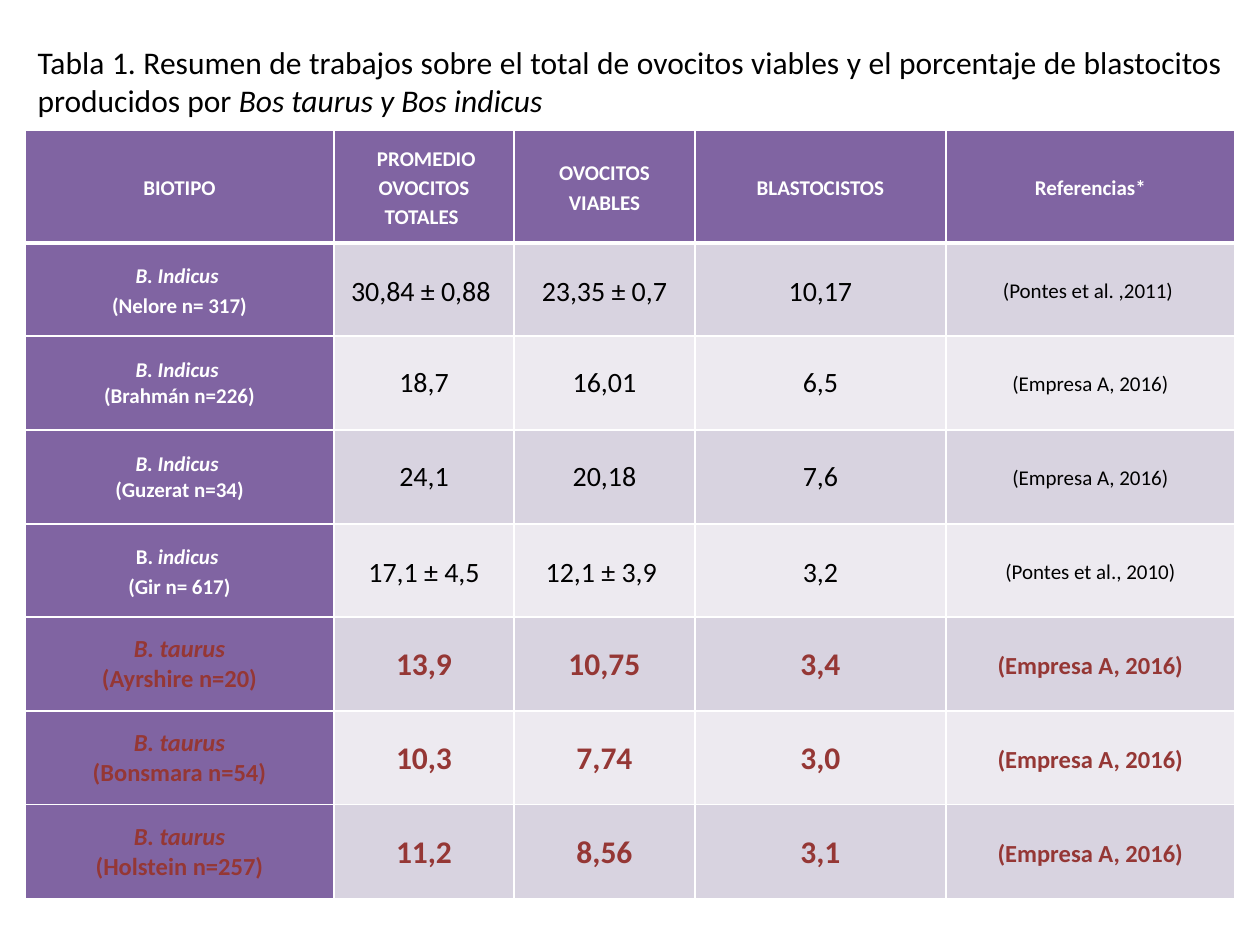
"""Build a slide with a table of oocyte and blastocyst yields by cattle biotype."""
from lxml import etree
from pptx import Presentation
from pptx.dml.color import RGBColor
from pptx.enum.text import MSO_ANCHOR as ANCHOR, MSO_AUTO_SIZE as AUTO, PP_ALIGN as ALIGN
from pptx.oxml.ns import qn
from pptx.util import Pt

PX = 914400 / 126
PURPLE = RGBColor(0x80, 0x64, 0xA2)
LILAC = RGBColor(0xD8, 0xD3, 0xE0)
PALE = RGBColor(0xED, 0xEA, 0xF0)
MAROON = RGBColor(0x95, 0x37, 0x35)
WHITE = RGBColor(0xFF, 0xFF, 0xFF)
BLACK = RGBColor(0, 0, 0)

HEADERS = [" PROMEDIO OVOCITOS TOTALES ", "OVOCITOS VIABLES", "BLASTOCISTOS", "Referencias*"]
ROWS = [
    ("", "B. Indicus ", "(Nelore n= 317)", "30,84 ± 0,88 ", "23,35 ± 0,7", "10,17", "(Pontes et al. ,2011) "),
    ("", "B. Indicus ", "(Brahmán n=226)", "18,7", "16,01", "6,5", "(Empresa A, 2016)"),
    ("", "B. Indicus ", "(Guzerat n=34)", "24,1", "20,18", "7,6", "(Empresa A, 2016)"),
    ("B. ", "indicus ", "(Gir n= 617)", "17,1 ± 4,5", "12,1 ± 3,9 ", "3,2", "(Pontes et al., 2010)"),
    ("", "B. taurus", "(Ayrshire n=20)", "13,9", "10,75", "3,4", "(Empresa A, 2016)"),
    ("", "B. taurus", "(Bonsmara n=54)", "10,3", "7,74", "3,0", "(Empresa A, 2016)"),
    ("", "B. taurus", "(Holstein n=257)", "11,2", "8,56", "3,1", "(Empresa A, 2016)"),
]
COL_WIDTHS = [309, 180, 181, 251, 289]
ROW_HEIGHTS = [113, 93, 94, 94, 93, 94, 94, 94]
LOOSE_ROWS = (0, 1, 4)


def px(n):
    return int(n * PX)


def add_run(p, text, size, color, bold=False, italic=False):
    r = p.add_run()
    r.text = text
    font = r.font
    font.name, font.size, font.bold, font.italic = "Calibri", Pt(size), bold, italic
    font.color.rgb = color


prs = Presentation()
prs.slide_width, prs.slide_height = px(1260), px(945)
s = prs.slides.add_slide(prs.slide_layouts[5])

title = s.shapes.title
title.left, title.top, title.width, title.height = px(25), px(37), px(1210), px(89)
tf = title.text_frame
tf.word_wrap = True
tf.auto_size = AUTO.NONE
tf.vertical_anchor = ANCHOR.TOP
p = tf.paragraphs[0]
p.alignment = ALIGN.JUSTIFY
add_run(p, "Tabla 1. Resumen de trabajos sobre el total de ovocitos viables y el "
           "porcentaje de blastocitos producidos por ", 18, BLACK)
add_run(p, "Bos taurus y Bos indicus ", 18, BLACK, italic=True)

table = s.shapes.add_table(len(ROW_HEIGHTS), len(COL_WIDTHS), px(25), px(130),
                           px(sum(COL_WIDTHS)), px(sum(ROW_HEIGHTS))).table
for col, width in zip(table.columns, COL_WIDTHS):
    col.width = px(width)
for row, height in zip(table.rows, ROW_HEIGHTS):
    row.height = px(height)

for i in range(len(ROW_HEIGHTS)):
    taurus = i > 4
    for j in range(len(COL_WIDTHS)):
        cell = table.cell(i, j)
        loose = i in LOOSE_ROWS or j == 4
        cell.vertical_anchor = ANCHOR.MIDDLE
        cell.margin_left = cell.margin_right = px(9 if loose else 1)
        cell.margin_top = px(0 if loose else 1)
        cell.margin_bottom = 0

        p = cell.text_frame.paragraphs[0]
        if i == 0:
            add_run(p, (["BIOTIPO"] + HEADERS)[j], 12, WHITE, bold=True)
        elif j == 0:
            upright, species, breed = ROWS[i - 1][:3]
            size, color = (14, MAROON) if taurus else (12, WHITE)
            if upright:
                add_run(p, upright, size, color, bold=True)
            add_run(p, species, size, color, bold=True, italic=True)
            add_run(cell.text_frame.add_paragraph(), breed, size, color, bold=True)
        else:
            size = (12 if j == 4 else 16) + 2 * taurus
            add_run(p, ROWS[i - 1][j + 2], size, MAROON if taurus else BLACK, bold=taurus)
        for p in cell.text_frame.paragraphs:
            p.alignment = ALIGN.CENTER
            p.line_spacing = 1.15 if loose else 1.0

        tcPr = cell._tc.get_or_add_tcPr()
        for side in ("lnL", "lnR", "lnT", "lnB"):
            thick = (i, side) in ((0, "lnB"), (1, "lnT"))
            ln = etree.SubElement(tcPr, qn("a:" + side), w=str(Pt(3 if thick else 1)))
            line_fill = etree.SubElement(ln, qn("a:solidFill"))
            etree.SubElement(line_fill, qn("a:srgbClr"), val=str(WHITE))
        cell.fill.solid()
        cell.fill.fore_color.rgb = PURPLE if i == 0 or j == 0 else LILAC if i % 2 else PALE

prs.save("out.pptx")
